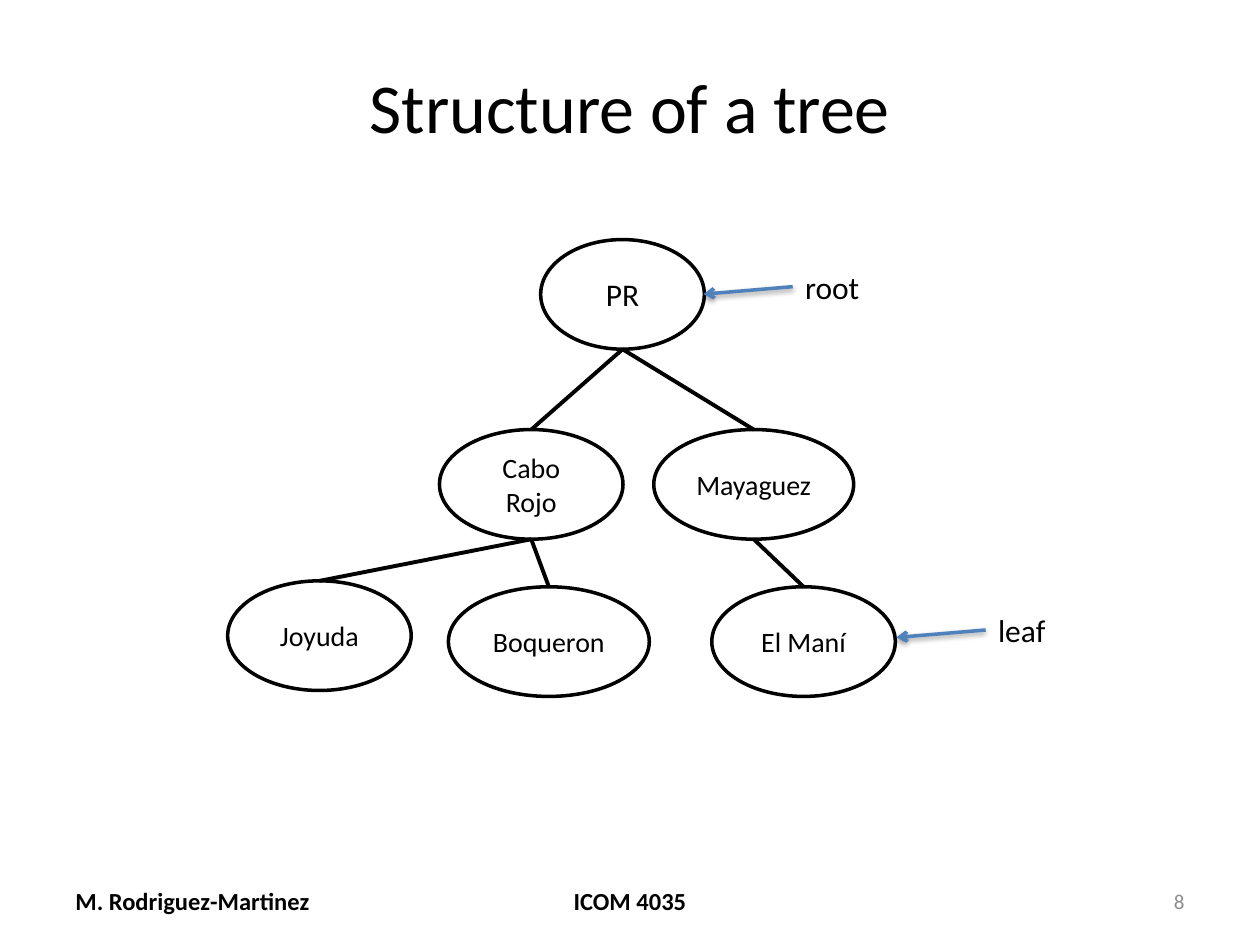
import pptx
import pptx.util
import pptx.dml.color
import pptx.enum.shapes
import pptx.enum.text
import pptx.oxml
import pptx.oxml.ns

Cm = pptx.util.Cm
Pt = pptx.util.Pt
ALIGN = pptx.enum.text.PP_ALIGN
NODE_HEIGHT = 2.21


def color(value):
    return pptx.dml.color.RGBColor.from_string(value)


def write(box, text, size=18, bold=False, ink="000000", align=ALIGN.LEFT,
          anchor=pptx.enum.text.MSO_ANCHOR.MIDDLE, wrap=True):
    box.text_frame.word_wrap = wrap
    box.text_frame.vertical_anchor = anchor
    para = box.text_frame.paragraphs[0]
    para.alignment = align
    span = para.add_run()
    span.text = text
    span.font.name = "Calibri"
    span.font.size = Pt(size)
    span.font.bold = bold
    span.font.color.rgb = color(ink)


deck = pptx.Presentation()
deck.slide_width = Cm(25.4)
deck.slide_height = Cm(19.05)
page = deck.slides.add_slide(deck.slide_layouts[6])

title = page.shapes.add_textbox(Cm(1.27), Cm(0.76), Cm(22.86), Cm(2.72))
write(title, "Structure of a tree", size=40, align=ALIGN.CENTER)

footers = [
    ("M. Rodriguez-Martinez", 1.27, 5.92, 14, True, "000000", ALIGN.LEFT),
    ("ICOM 4035", 8.68, 8.04, 14, True, "000000", ALIGN.CENTER),
    ("8", 18.21, 5.92, 12, False, "8C8C8C", ALIGN.RIGHT),
]
for text, left, width, size, bold, ink, align in footers:
    box = page.shapes.add_textbox(Cm(left), Cm(17.65), Cm(width), Cm(1.02))
    write(box, text, size=size, bold=bold, ink=ink, align=align)

nodes = {
    "PR": (10.9, 4.83, 3.3, 18),
    "Cabo Rojo": (8.86, 8.66, 3.7, 16),
    "Mayaguez": (13.18, 8.66, 4.03, 16),
    "Joyuda": (4.59, 11.71, 3.7, 16),
    "Boqueron": (9.04, 11.83, 4.05, 16),
    "El Maní": (14.35, 11.83, 3.7, 16),
}
for name, (left, top, width, size) in nodes.items():
    oval = page.shapes.add_shape(pptx.enum.shapes.MSO_SHAPE.OVAL,
                                 Cm(left), Cm(top), Cm(width), Cm(NODE_HEIGHT))
    oval.shadow.inherit = False
    oval.fill.solid()
    oval.fill.fore_color.rgb = color("FFFFFF")
    oval.line.color.rgb = color("000000")
    oval.line.width = Pt(2)
    write(oval, name, size=size, align=ALIGN.CENTER)

edges = [("PR", "Cabo Rojo"), ("PR", "Mayaguez"), ("Cabo Rojo", "Joyuda"),
         ("Cabo Rojo", "Boqueron"), ("Mayaguez", "El Maní")]
for parent, child in edges:
    left, top, width, size = nodes[parent]
    child_left, child_top, child_width, child_size = nodes[child]
    edge = page.shapes.add_connector(
        pptx.enum.shapes.MSO_CONNECTOR.STRAIGHT,
        Cm(left + width / 2), Cm(top + NODE_HEIGHT),
        Cm(child_left + child_width / 2), Cm(child_top))
    edge.line.color.rgb = color("000000")
    edge.line.width = Pt(2.25)
    edge._element.spPr.append(pptx.oxml.parse_xml(
        "<a:effectLst %s/>" % pptx.oxml.ns.nsdecls("a")))

for text, left, top, width in [("root", 15.98, 5.27, 1.63), ("leaf", 19.87, 12.19, 1.5)]:
    label = page.shapes.add_textbox(Cm(left), Cm(top), Cm(width), Cm(1.02))
    write(label, text, anchor=pptx.enum.text.MSO_ANCHOR.TOP, wrap=False)
    arrow = page.shapes.add_connector(
        pptx.enum.shapes.MSO_CONNECTOR.STRAIGHT,
        Cm(left), Cm(top + 0.51), Cm(left - 1.8), Cm(top + 0.66))
    arrow.line.color.rgb = color("4F81BD")
    arrow.line.width = Pt(2)
    arrow.line._get_or_add_ln().append(pptx.oxml.parse_xml(
        '<a:tailEnd %s type="arrow"/>' % pptx.oxml.ns.nsdecls("a")))
    arrow._element.spPr.append(pptx.oxml.parse_xml(
        '<a:effectLst %s><a:outerShdw blurRad="40000" dist="20000" dir="5400000" rotWithShape="0">'
        '<a:srgbClr val="000000"><a:alpha val="38000"/></a:srgbClr>'
        '</a:outerShdw></a:effectLst>' % pptx.oxml.ns.nsdecls("a")))

deck.save("out.pptx")
